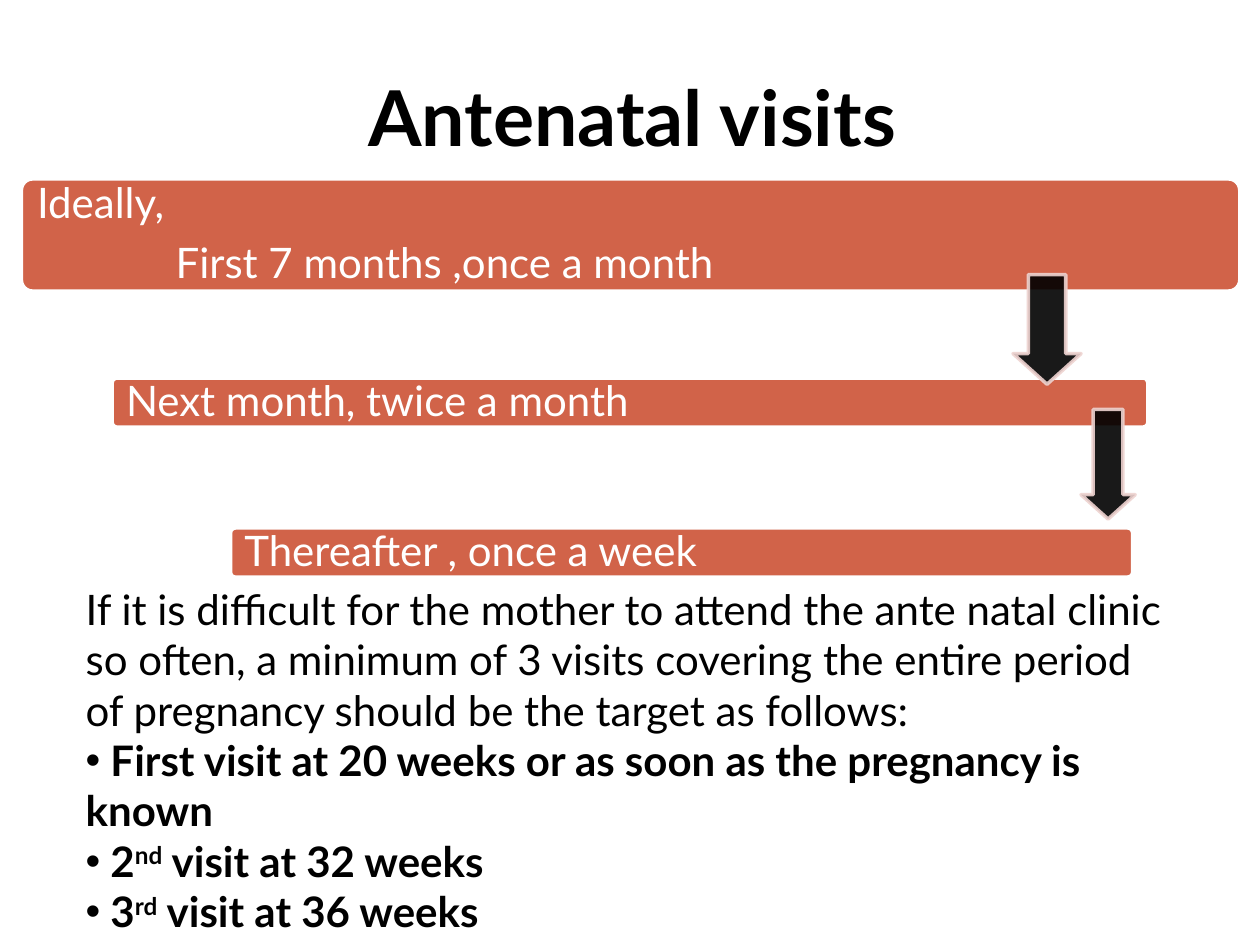
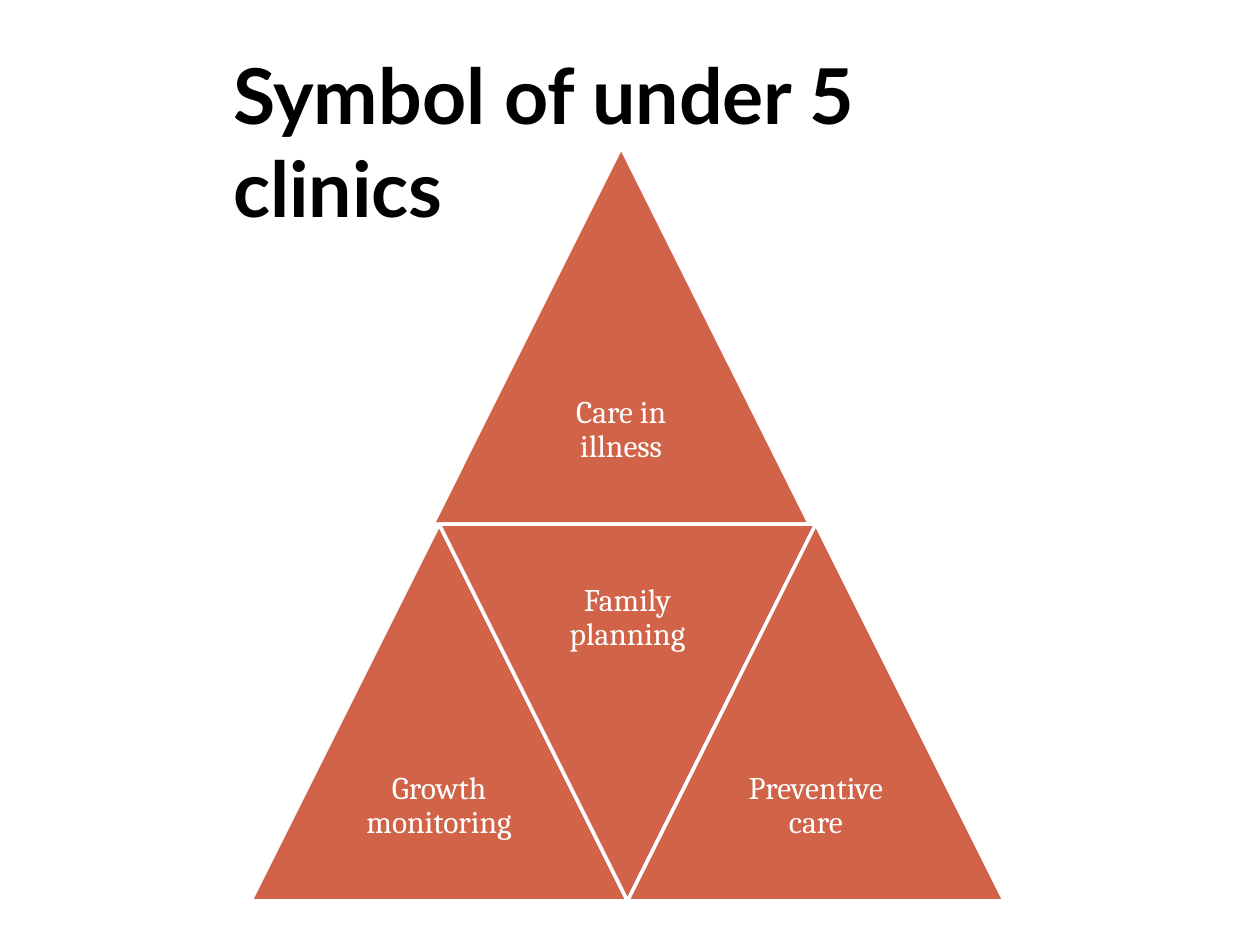
import pptx
import pptx.dml.color
import pptx.enum.shapes
import pptx.enum.text
import pptx.oxml.ns
import pptx.util
from lxml import etree

Inches = pptx.util.Inches
Pt = pptx.util.Pt
SHAPE = pptx.enum.shapes.MSO_SHAPE
ALIGN = pptx.enum.text.PP_ALIGN
ANCHOR = pptx.enum.text.MSO_ANCHOR
FIT = pptx.enum.text.MSO_AUTO_SIZE
qn = pptx.oxml.ns.qn

COLOURS = {"brick": "D16349", "white": "FFFFFF", "black": "000000", "blush": "EED3D0"}
SANS, SERIF = "Lato", "Cambria"

VISIT_BARS = [
    ((0.17, 1.42, 9.67, 0.89), ["Ideally,", "First 7 months ,once a month"]),
    ((0.89, 3, 8.22, 0.39), ["Next month, twice a month"]),
    ((1.83, 4.19, 7.16, 0.39), ["Thereafter , once a week"]),
]
VISIT_ARROWS = [(8.04, 2.18, 0.54, 0.87), (8.58, 3.25, 0.43, 0.87)]
MINIMUM_VISITS = [
    ["If it is difficult for the mother to attend the ante natal clinic so often, "
     "a minimum of 3 visits covering the entire period of pregnancy should be "
     "the target as follows:"],
    [" First visit at 20 weeks or as soon as the pregnancy is known"],
    [" 2", "nd", " visit at 32 weeks"],
    [" 3", "rd", " visit at 36 weeks"],
]


def rgb(name):
    """Return the named colour."""
    return pptx.dml.color.RGBColor.from_string(COLOURS[name])


def place(part, box):
    """Move a part to a box given in inches."""
    part.left, part.top, part.width, part.height = map(Inches, box)


def style_run(run, size, face, colour, bold=False):
    """Format one run of text."""
    run.font.size, run.font.name, run.font.bold = Pt(size), face, bold
    run.font.color.rgb = rgb(colour)


def set_insets(frame, side, vertical):
    """Set the inner margins of a text frame in inches."""
    frame.margin_left = frame.margin_right = Inches(side)
    frame.margin_top = frame.margin_bottom = Inches(vertical)


def add_block(slide, kind, box, fill="brick", line="white"):
    """Add a filled preset shape with a 2 pt outline."""
    block = slide.shapes.add_shape(kind, *map(Inches, box))
    block.shadow.inherit = False
    block.fill.solid()
    block.fill.fore_color.rgb = rgb(fill)
    block.line.color.rgb = rgb(line)
    block.line.width = Pt(2)
    return block


def write_label(frame, lines, size, face, align):
    """Write centred-in-height white label lines."""
    frame.word_wrap = True
    frame.vertical_anchor = ANCHOR.MIDDLE
    frame.text = "\n".join(lines)
    for paragraph in frame.paragraphs:
        paragraph.alignment = align
        paragraph.line_spacing = 0.9
        if paragraph.text != lines[-1]:
            paragraph.space_after = Pt(size * 0.35)
        for run in paragraph.runs:
            style_run(run, size, face, "white")


def add_title(slide, box, text, align):
    """Fill and place the title placeholder."""
    title = slide.shapes.title
    place(title, box)
    frame = title.text_frame
    frame.text = text
    frame.word_wrap = True
    frame.auto_size = FIT.SHAPE_TO_FIT_TEXT
    frame.vertical_anchor = ANCHOR.TOP
    frame.paragraphs[0].alignment = align
    style_run(frame.paragraphs[0].runs[0], 44, SANS, "black", True)


def add_visit_bar(slide, box, lines):
    """Add a bar of the visit schedule, indenting its second line."""
    frame = add_block(slide, SHAPE.ROUNDED_RECTANGLE, box)
    frame.adjustments[0] = 0.1
    frame = frame.text_frame
    set_insets(frame, 0.1, 0)
    write_label(frame, lines, 24, SANS, ALIGN.LEFT)
    for paragraph in frame.paragraphs[1:]:
        paragraph._p.get_or_add_pPr().set("marL", str(Inches(1.1)))


def add_visit_arrow(slide, box):
    """Add a slightly transparent arrow between two bars."""
    arrow = add_block(slide, SHAPE.DOWN_ARROW, box, "black", "blush")
    arrow.adjustments[0], arrow.adjustments[1] = 0.55, 0.45
    for colour in arrow._element.spPr.iter(qn("a:srgbClr")):
        etree.SubElement(colour, qn("a:alpha")).set("val", "90000")


def add_minimum_visits(slide, box):
    """Fill the body placeholder with the minimum visits."""
    body = slide.placeholders[1]
    place(body, box)
    frame = body.text_frame
    frame.word_wrap = True
    frame.auto_size = FIT.SHAPE_TO_FIT_TEXT
    frame.vertical_anchor = ANCHOR.TOP
    for index, pieces in enumerate(MINIMUM_VISITS):
        paragraph = frame.add_paragraph() if index else frame.paragraphs[0]
        properties = paragraph._p.get_or_add_pPr()
        properties.set("marL", "0")
        properties.set("indent", "0")
        if index:
            etree.SubElement(properties, qn("a:buFont")).set("typeface", "Arial")
            etree.SubElement(properties, qn("a:buChar")).set("char", "•")
        else:
            etree.SubElement(properties, qn("a:buNone"))
        paragraph.space_before = Pt(0)
        for position, piece in enumerate(pieces):
            run = paragraph.add_run()
            run.text = piece
            style_run(run, 24, SANS, "black", index > 0)
            if position == 1:
                run._r.get_or_add_rPr().set("baseline", "30000")


def add_clinic_triangle(slide, left, top, side, text, inverted=False):
    """Add one labelled triangle of the symbol."""
    label = add_block(slide, SHAPE.ISOSCELES_TRIANGLE, (left, top, side, side))
    if inverted:
        label.rotation = 180
        label = slide.shapes.add_textbox(
            *map(Inches, (left + side / 4, top, side / 2, side / 2)))
    set_insets(label.text_frame, 0.07, 0.07)
    write_label(label.text_frame, [text], 18, SERIF, ALIGN.CENTER)


def add_clinic_symbol(slide, left, top, side):
    """Build the large triangle from four smaller ones."""
    base = top + side
    add_clinic_triangle(slide, left + side / 2 - 0.05, top, side, "Care in illness")
    for step, text in enumerate(["Growth monitoring", "Family planning", "Preventive care"]):
        add_clinic_triangle(slide, left + step * side / 2, base, side, text, step == 1)


def build_visits_slide(deck):
    """Build the slide on antenatal visits."""
    slide = deck.slides.add_slide(deck.slide_layouts[1])
    add_title(slide, (1.73, 0.5, 6.58, 1.58), "Antenatal visits", ALIGN.CENTER)
    for box, lines in VISIT_BARS:
        add_visit_bar(slide, box, lines)
    for box in VISIT_ARROWS:
        add_visit_arrow(slide, box)
    add_minimum_visits(slide, (0.58, 4.58, 8.83, 2.52))


def build_symbol_slide(deck):
    """Build the slide on the symbol of under 5 clinics."""
    slide = deck.slides.add_slide(deck.slide_layouts[5])
    add_title(slide, (1.75, 0.33, 6.92, 0.84), "Symbol of under 5 clinics", ALIGN.LEFT)
    add_clinic_symbol(slide, 1.99, 1.17, 2.99)


def main():
    """Build and save the deck."""
    deck = pptx.Presentation()
    deck.slide_width, deck.slide_height = Inches(10), Inches(7.5)
    build_visits_slide(deck)
    build_symbol_slide(deck)
    deck.save("out.pptx")


if __name__ == "__main__":
    main()
